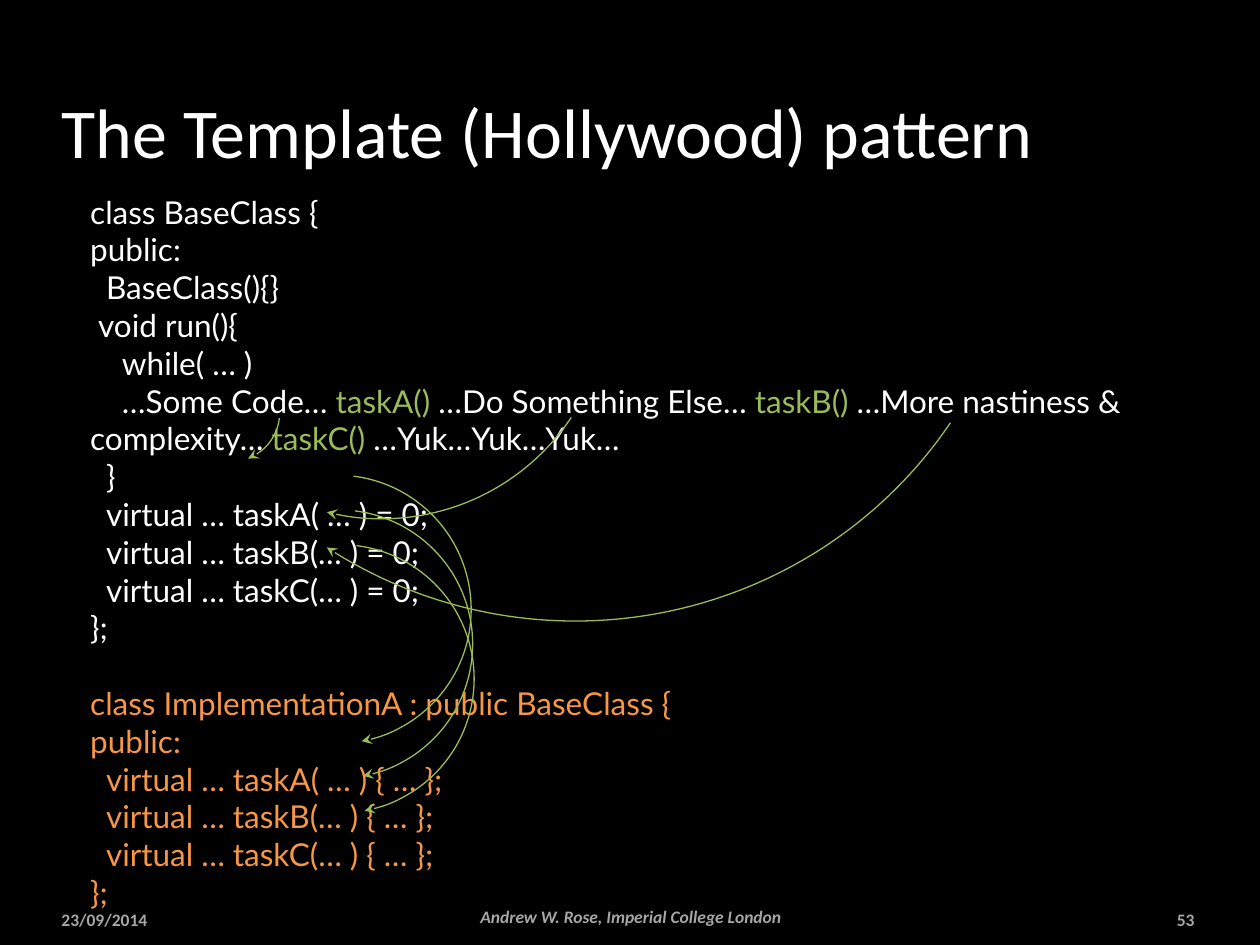
"""Builds the slide on the Template (Hollywood) pattern."""
import pptx
import pptx.util
import pptx.dml.color
import pptx.enum.shapes
import pptx.enum.text
import pptx.oxml.ns
import lxml.etree
from dataclasses import dataclass

Cm, Pt = pptx.util.Cm, pptx.util.Pt
Rgb = pptx.dml.color.RGBColor.from_string
Align = pptx.enum.text.PP_ALIGN
Anchor = pptx.enum.text.MSO_ANCHOR


@dataclass(frozen=True)
class Theme:
    back: str = "000000"
    text: str = "FFFFFF"
    footer: str = "A6A6A6"
    task: str = "9BBB59"
    derived: str = "F79646"
    font: str = "Calibri"
    code_font: str = "Lato"
    title_size: int = 40
    code_size: int = 18
    footer_size: int = 10


theme = Theme()


def add_run(p, text, font, size, color):
    r = p.add_run()
    r.text = text
    r.font.name = font
    r.font.size = Pt(size)
    r.font.color.rgb = Rgb(color)
    return r


prs = pptx.Presentation()
prs.slide_width, prs.slide_height = Cm(25.4), Cm(19.05)
s = prs.slides.add_slide(prs.slide_layouts[5])
s.background.fill.solid()
s.background.fill.fore_color.rgb = Rgb(theme.back)

footers = [
    (0.99, 18.19, 4.06, Align.LEFT, False, "23/09/2014"),
    (21.89, 18.19, 2.44, Align.RIGHT, False, "53"),
    (7.04, 18.14, 11.35, Align.CENTER, True, "Andrew W. Rose, Imperial College London"),
]
for x, y, w, align, italic, text in footers:
    tf = s.shapes.add_textbox(Cm(x), Cm(y), Cm(w), Cm(0.69)).text_frame
    tf.word_wrap = True
    tf.vertical_anchor = Anchor.MIDDLE
    p = tf.paragraphs[0]
    p.alignment = align
    r = add_run(p, text, theme.font, theme.footer_size, theme.footer)
    r.font.bold, r.font.italic = True, italic

sp = s.shapes.title
sp.left, sp.top, sp.width, sp.height = Cm(0.99), Cm(0.64), Cm(21.34), Cm(2.97)
tf = sp.text_frame
tf.vertical_anchor = Anchor.BOTTOM
p = tf.paragraphs[0]
p.alignment = Align.LEFT
p.space_before = Pt(4)
add_run(p, "The Template (Hollywood) pattern", theme.font, theme.title_size, theme.text)

base = [
    (0, ["class BaseClass {"]),
    (0, ["public:"]),
    (2, ["BaseClass(){}"]),
    (1, ["void run(){"]),
    (4, ["while( … )"]),
    (4, ["…Some Code… ", "taskA()", " …Do Something Else… ", "taskB()",
         " …More nastiness & complexity… ", "taskC()", " …Yuk…Yuk…Yuk…"]),
    (2, ["}"]),
    (2, ["virtual … taskA( … ) = 0;"]),
    (2, ["virtual … taskB(… ) = 0;"]),
    (2, ["virtual … taskC(… ) = 0;"]),
    (0, ["};"]),
]
derived = [
    (0, ["class ImplementationA : public BaseClass {"]),
    (0, ["public:"]),
    (2, ["virtual … taskA( … ) { … };"]),
    (2, ["virtual … taskB(… ) { … };"]),
    (2, ["virtual … taskC(… ) { … };"]),
    (0, ["};"]),
]
tf = s.shapes.add_textbox(Cm(1.57), Cm(3.76), Cm(23.11), Cm(14.88)).text_frame
tf.word_wrap = True
tf.auto_size = pptx.enum.text.MSO_AUTO_SIZE.SHAPE_TO_FIT_TEXT
p = tf.paragraphs[0]
for lines, color in ((base, theme.text), (derived, theme.derived)):
    for i, (indent, parts) in enumerate(lines):
        if lines is derived or i > 0:
            p = tf.add_paragraph()
        if lines is derived and i == 0:
            p.space_before = Pt(1.2 * theme.code_size)
        p._p.get_or_add_pPr().set("indent", str(Cm(0.16 * indent)))
        for j, part in enumerate(parts):
            add_run(p, part, theme.code_font, theme.code_size, theme.task if j % 2 else color)

calls = [
    (3.51, 7.32, 2.13, 2.01, 5.4, 65.02),
    (3.1, 1.27, 9.19, 9.19, 33.73, 103.91),
    (2.49, -5.49, 18.21, 18.01, 33.5, 123.65),
]
overrides = [(4.09 + 0.03 * i, 9.58 + 0.7 * i, 5.41, 5.41, 277.05, 79.42) for i in range(3)]
for x, y, w, h, start, end in calls + overrides:
    sp = s.shapes.add_shape(pptx.enum.shapes.MSO_SHAPE.ARC, Cm(x), Cm(y), Cm(w), Cm(h))
    sp.shadow.inherit = False
    sp.adjustments[0], sp.adjustments[1] = start * 0.6, end * 0.6
    sp.fill.background()
    sp.line.color.rgb = Rgb(theme.task)
    sp.line.width = Pt(0.75)
    ln = sp.line._get_or_add_ln()
    lxml.etree.SubElement(ln, pptx.oxml.ns.qn("a:tailEnd"), type="stealth")

prs.save("out.pptx")
